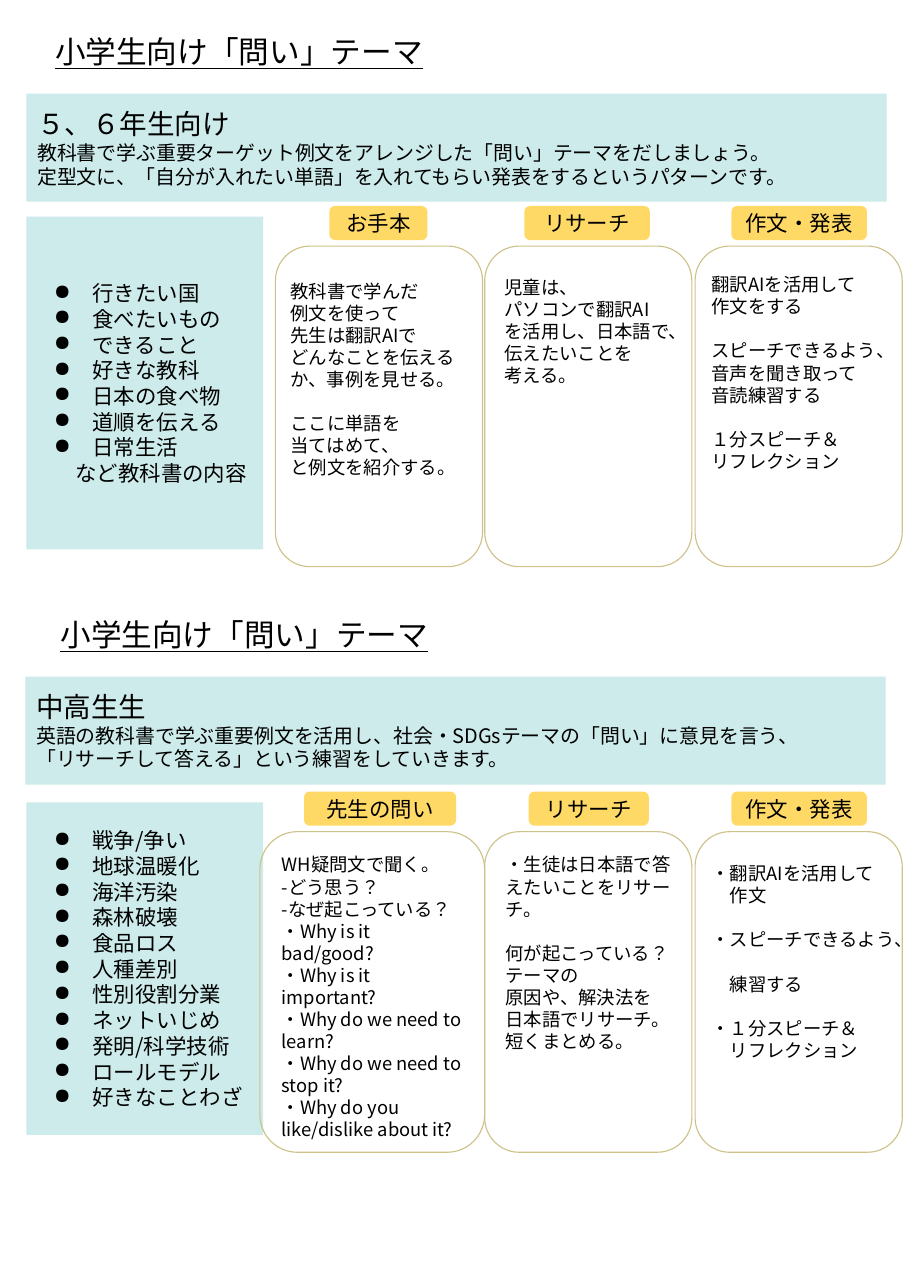
from lxml import etree
from pptx import Presentation
from pptx import util as u
from pptx.dml.color import RGBColor
from pptx.enum import lang, shapes, text
from pptx.oxml.ns import qn

Pt = u.Pt
FONT = "Noto Sans CJK JP"
BLACK = RGBColor(0x00, 0x00, 0x00)
AQUA = RGBColor(0xCD, 0xEB, 0xEA)
YELLOW = RGBColor(0xFF, 0xD9, 0x66)
GOLD = RGBColor(0xCE, 0xC2, 0x8A)
LEFT, CENTER = text.PP_ALIGN.LEFT, text.PP_ALIGN.CENTER
TOP, MIDDLE = text.MSO_ANCHOR.TOP, text.MSO_ANCHOR.MIDDLE
RECT = shapes.MSO_SHAPE.RECTANGLE
ROUND = shapes.MSO_SHAPE.ROUNDED_RECTANGLE
INSET = 7.2


def write(sp, lines, size, align=LEFT, anchor=MIDDLE, inset_y=INSET, underline=None):
    """Fill a shape with lines; a line is a string or (string, options)."""
    tf = sp.text_frame
    frame = {"word_wrap": True, "auto_size": text.MSO_AUTO_SIZE.NONE,
             "vertical_anchor": anchor, "margin_left": Pt(INSET),
             "margin_right": Pt(INSET), "margin_top": Pt(inset_y),
             "margin_bottom": Pt(inset_y)}
    for key, value in frame.items():
        setattr(tf, key, value)
    for i, line in enumerate(lines):
        words, opts = (line, {}) if isinstance(line, str) else line
        p = tf.paragraphs[0] if i == 0 else tf.add_paragraph()
        p.text = words
        pt = opts.get("size", size)
        layout = {"alignment": align, "line_spacing": Pt(pt * 1.2),
                  "space_before": Pt(opts.get("gap", 0)), "space_after": Pt(0)}
        for key, value in layout.items():
            setattr(p, key, value)
        pPr = p._p.get_or_add_pPr()
        pPr.set("marL", str(Pt(opts.get("left", 0))))
        pPr.set("indent", str(Pt(opts.get("indent", 0))))
        if opts.get("bullet"):
            etree.SubElement(pPr, qn("a:buChar")).set("char", "●")
        else:
            etree.SubElement(pPr, qn("a:buNone"))
        font = {"name": FONT, "size": Pt(pt), "bold": False, "underline": underline,
                "language_id": lang.MSO_LANGUAGE_ID.JAPANESE}
        for r in p.runs:
            for key, value in font.items():
                setattr(r.font, key, value)
            r.font.color.rgb = BLACK
            etree.SubElement(r._r.get_or_add_rPr(), qn("a:ea")).set("typeface", FONT)


def box(s, kind, x, y, w, h, fill=None, line=None):
    sp = s.shapes.add_shape(kind, Pt(x), Pt(y), Pt(w), Pt(h))
    sp.shadow.inherit = False
    if fill is None:
        sp.fill.background()
    else:
        sp.fill.solid()
        sp.fill.fore_color.rgb = fill
    if line is None:
        sp.line.fill.background()
    else:
        sp.line.color.rgb = line
        sp.line.width = Pt(0.75)
    return sp


def heading(sp, x, y):
    sp.left, sp.top, sp.width, sp.height = Pt(x), Pt(y), Pt(293.8), Pt(23.8)
    write(sp, ["小学生向け「問い」テーマ"], 20, underline=True)


def band(s, x, y, title, lines):
    sp = box(s, RECT, x, y, 562.3, 70.6, AQUA)
    write(sp, [(title, {"size": 18})] + lines, 13)


def topic_list(s, x, y, topics, closing):
    sp = box(s, RECT, x, y, 154.8, 217.4, AQUA)
    lines = [(t, {"left": 36, "indent": -25.2, "bullet": True}) for t in topics]
    lines += [(t, {"left": 24.8}) for t in closing]
    write(sp, lines, 14)


def step(s, y, card, tag, note):
    """A yellow tag, the outlined card under it and the card's text."""
    x, w = card
    label, tag_x, tag_w = tag
    dx, dy, note_w, lines = note
    tag_sp = box(s, ROUND, tag_x, y, tag_w, 22.3, YELLOW)
    write(tag_sp, [label], 14, align=CENTER)
    box(s, ROUND, x, y + 26.2, w, 209.5, line=GOLD)
    tb = s.shapes.add_textbox(Pt(x + dx), Pt(y + 26.2 + dy), Pt(note_w), Pt(167))
    write(tb, lines, 12, anchor=TOP, inset_y=3.6)


def section(s, title_sp, top, data):
    heading(title_sp, data["title_x"], top - 39.3)
    band(s, data["band_x"], top, *data["band"])
    lane = top + data["lane"]
    topic_list(s, 17.3, lane + 7, data["topics"], data["closing"])
    for card, tag, note in data["steps"]:
        step(s, lane, card, tag, note)


GAP = {"gap": 14.4}
HANG = {"left": 12, "indent": -12}
CARD_2, CARD_3 = (316.8, 135.4), (454.3, 135.4)
WRITING_TAG = ("作文・発表", 478.1, 88.6)

ELEMENTARY = {
    "title_x": 28.8, "band_x": 17.3, "lane": 73.4,
    "band": ("５、６年生向け", [
        "教科書で学ぶ重要ターゲット例文をアレンジした「問い」テーマをだしましょう。",
        "定型文に、「自分が入れたい単語」を入れてもらい発表をするというパターンです。"]),
    "topics": ["行きたい国", "食べたいもの", "できること", "好きな教科",
               "日本の食べ物", "道順を伝える", "日常生活"],
    "closing": ["など教科書の内容"],
    "steps": [
        ((180, 135.4), ("お手本", 215.3, 64.1), (2.9, 18.7, 132.5, [
            "教科書で学んだ", "例文を使って", "先生は翻訳AIで",
            "どんなことを伝えるか、事例を見せる。",
            ("ここに単語を", GAP), "当てはめて、", "と例文を紹介する。"])),
        (CARD_2, ("リサーチ", 342.7, 82.1), (5.8, 15.8, 124.6, [
            "児童は、", "パソコンで翻訳AI", "を活用し、日本語で、",
            "伝えたいことを", "考える。"])),
        (CARD_3, WRITING_TAG, (3.6, 14.4, 137, [
            "翻訳AIを活用して", "作文をする", ("スピーチできるよう、", GAP),
            "音声を聞き取って", "音読練習する", ("１分スピーチ＆", GAP),
            "リフレクション"])),
    ],
}

SECONDARY = {
    "title_x": 32.4, "band_x": 16.6, "lane": 75.2,
    "band": ("中高生生", [
        "英語の教科書で学ぶ重要例文を活用し、社会・SDGsテーマの「問い」に意見を言う、",
        "「リサーチして答える」という練習をしていきます。"]),
    "topics": ["戦争/争い", "地球温暖化", "海洋汚染", "森林破壊", "食品ロス",
               "人種差別", "性別役割分業", "ネットいじめ", "発明/科学技術",
               "ロールモデル", "好きなことわざ"],
    "closing": [],
    "steps": [
        ((169.9, 146.9), ("先生の問い", 198.7, 99.4), (7.2, 10.8, 132.5, [
            "WH疑問文で聞く。", "-どう思う？", "-なぜ起こっている？",
            "・Why is it\vbad/good?", "・Why is it important?",
            "・Why do we need to learn?", "・Why do we need to stop it?",
            "・Why do you like/dislike about it?"])),
        (CARD_2, ("リサーチ", 345.6, 78.5), (6.6, 10.8, 122.2, [
            "・生徒は日本語で答えたいことをリサーチ。",
            ("何が起こっている？テーマの", GAP), "原因や、解決法を",
            "日本語でリサーチ。", "短くまとめる。"])),
        (CARD_3, WRITING_TAG, (3.6, 16.6, 137, [
            ("・翻訳AIを活用して\v作文", HANG),
            ("・スピーチできるよう、\v練習する", {**HANG, **GAP}),
            ("・１分スピーチ＆\vリフレクション", {**HANG, **GAP})])),
    ],
}


def main():
    prs = Presentation()
    prs.slide_width, prs.slide_height = Pt(595.44), Pt(841.68)
    s = prs.slides.add_slide(prs.slide_layouts[5])
    # Upper half: grades 5 and 6
    section(s, s.shapes.title, 61.2, ELEMENTARY)
    # Lower half: junior and senior high school
    second_title = s.shapes.add_textbox(0, 0, Pt(100), Pt(20))
    section(s, second_title, 442.1, SECONDARY)
    prs.save("out.pptx")


if __name__ == "__main__":
    main()
